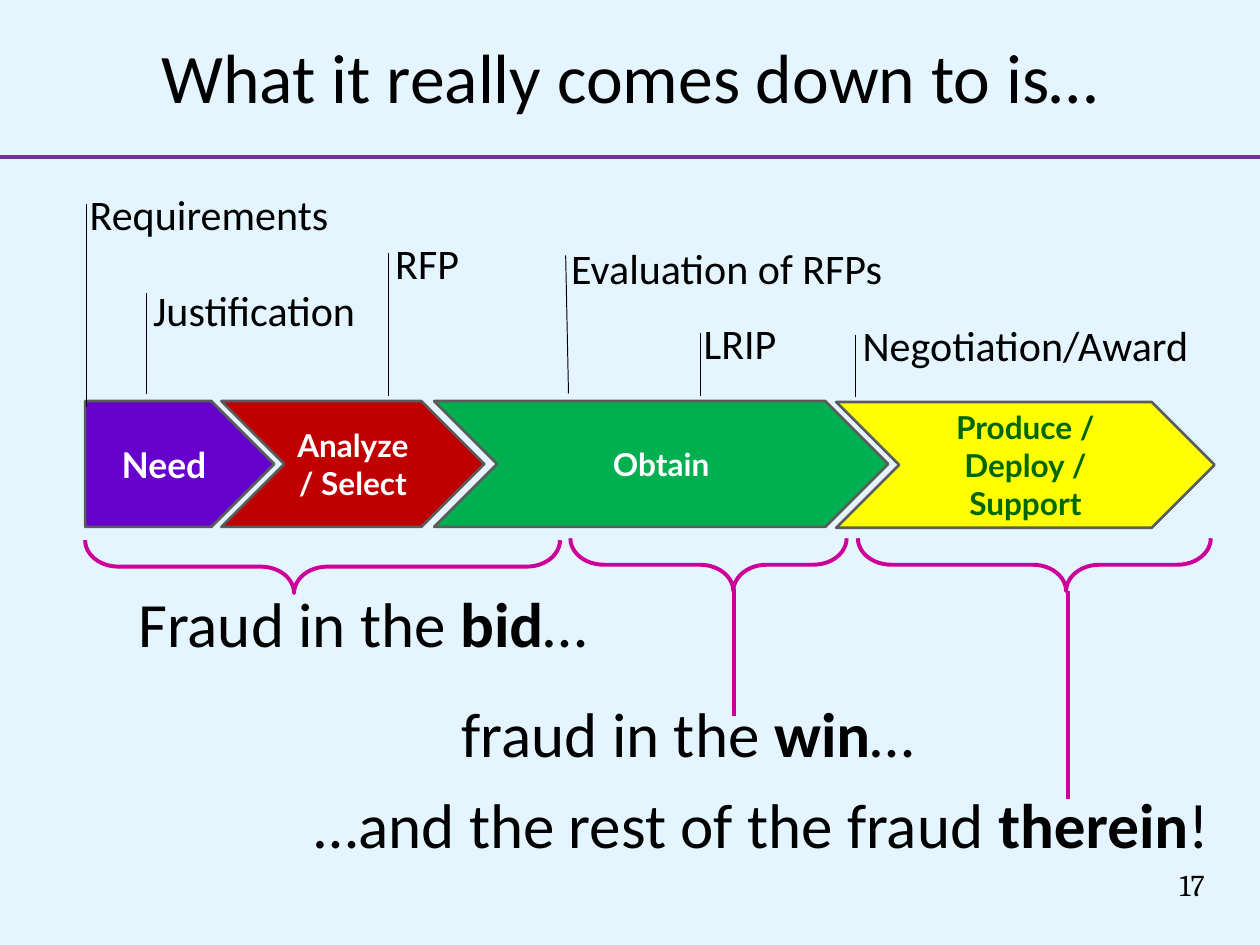
from dataclasses import dataclass

from lxml import etree
from pptx import Presentation
from pptx.dml.color import RGBColor
from pptx.enum import shapes, text
from pptx.oxml import ns
from pptx.util import Inches, Pt

SHAPE = shapes.MSO_SHAPE
ALIGN = text.PP_ALIGN
ANCHOR = text.MSO_ANCHOR


@dataclass(frozen=True)
class Theme:
    background: str = "E5F5FF"
    ink: str = "000000"
    light: str = "FFFFFF"
    rule: str = "7030A0"
    outline: str = "5A5B5D"
    brace: str = "CC0099"
    purple: str = "6600CC"
    red: str = "C00000"
    green: str = "00B050"
    yellow: str = "FFFF00"
    dark_green: str = "006600"
    body_font: str = "Calibri"
    phase_font: str = "Lato"
    number_font: str = "Cambria"
    title_size: float = 53
    message_size: float = 48
    label_size: float = 32
    need_size: float = 27
    phase_size: float = 24
    number_size: float = 23


class PageBuilder:
    def __init__(self, page, theme):
        self.page = page
        self.theme = theme
        page.background.fill.solid()
        page.background.fill.fore_color.rgb = RGBColor.from_string(theme.background)

    def set_text(self, shape, spans, size, font=None, color=None, bold=None,
                 align=ALIGN.LEFT, anchor=ANCHOR.TOP, insets=(0.1, 0.05)):
        frame = shape.text_frame
        frame.word_wrap = True
        frame.vertical_anchor = anchor
        frame.margin_left = frame.margin_right = Inches(insets[0])
        frame.margin_top = frame.margin_bottom = Inches(insets[1])
        para = frame.paragraphs[0]
        para.alignment = align
        para.font.name = font or self.theme.body_font
        para.font.size = Pt(size)
        para.font.bold = bold
        para.font.color.rgb = RGBColor.from_string(color or self.theme.ink)
        for words, strong in spans:
            span = para.add_run()
            span.text = words
            if strong:
                span.font.bold = True

    def text(self, left, top, width, height, spans, size, **style):
        box = self.page.shapes.add_textbox(
            Inches(left), Inches(top), Inches(width), Inches(height))
        self.set_text(box, spans, size, **style)

    def shape(self, kind, left, top, width, height, fill=None, line=None, weight=2):
        shape = self.page.shapes.add_shape(
            kind, Inches(left), Inches(top), Inches(width), Inches(height))
        shape.shadow.inherit = False
        if fill:
            shape.fill.solid()
            shape.fill.fore_color.rgb = RGBColor.from_string(fill)
        else:
            shape.fill.background()
        if line:
            shape.line.color.rgb = RGBColor.from_string(line)
            shape.line.width = Pt(weight)
        else:
            shape.line.fill.background()
        return shape

    def phase(self, kind, left, top, width, name, fill, color, size):
        arrow = self.shape(kind, left, top, width, 1.33, fill, self.theme.outline)
        self.set_text(arrow, [(name, False)], size, self.theme.phase_font, color,
                      True, ALIGN.CENTER, ANCHOR.MIDDLE)

    def line(self, start, end, color, weight):
        line = self.page.shapes.add_connector(
            shapes.MSO_CONNECTOR.STRAIGHT, *map(Inches, (*start, *end)))
        line.line.color.rgb = RGBColor.from_string(color)
        line.line.width = Pt(weight)
        etree.SubElement(line._element.spPr, ns.qn("a:effectLst"))

    def brace(self, left, top, span, point):
        depth = 0.56
        brace = self.shape(SHAPE.LEFT_BRACE, left + (span - depth) / 2,
                           top + (depth - span) / 2, depth, span,
                           line=self.theme.brace, weight=3)
        brace.rotation = 270
        brace.adjustments[0] = 0.63
        brace.adjustments[1] = point


def main():
    deck = Presentation()
    deck.slide_width, deck.slide_height = Inches(13.32), Inches(9.99)
    theme = Theme()
    builder = PageBuilder(deck.slides.add_slide(deck.slide_layouts[6]), theme)

    phases = [
        (SHAPE.PENTAGON, 0.9, 4.24, 2, "Need", theme.purple, theme.light, theme.need_size),
        (SHAPE.CHEVRON, 2.34, 4.24, 2.78, "Analyze/ Select", theme.red, theme.light,
         theme.phase_size),
        (SHAPE.CHEVRON, 4.59, 4.24, 4.8, "Obtain", theme.green, theme.light,
         theme.phase_size),
        (SHAPE.CHEVRON, 8.84, 4.25, 4, "Produce / Deploy / Support", theme.yellow,
         theme.dark_green, theme.phase_size),
    ]
    for phase in phases:
        builder.phase(*phase)

    builder.text(0, 0, 13.32, 1.6, [("What it really comes down to is…", False)],
                 theme.title_size, align=ALIGN.CENTER, anchor=ANCHOR.MIDDLE,
                 insets=(0.13, 0.07))
    builder.line((0, 1.66), (13.32, 1.66), theme.rule, 3.25)

    milestones = [
        ("Requirements", 0.85, 1.94, 3.42, (0.91, 4.3), (0.91, 2.16)),
        ("Justification", 1.52, 2.96, 2.89, (1.55, 4.17), (1.55, 3.1)),
        ("RFP", 4.08, 2.46, 1.18, (4.11, 4.19), (4.11, 2.67)),
        ("Evaluation of RFPs", 5.94, 2.51, 4.76, (6.01, 4.16), (5.98, 2.7)),
        ("LRIP", 7.34, 3.31, 2.89, (7.4, 4.19), (7.4, 3.52)),
        ("Negotiation/Award", 9.02, 3.33, 3.95, (9.04, 4.2), (9.04, 3.54)),
    ]
    for name, left, top, width, start, end in milestones:
        builder.line(start, end, theme.ink, 0.75)
        builder.text(left, top, width, 0.64, [(name, False)], theme.label_size)

    messages = [
        (1.33, 6.11, 5.19, "Fraud in the ", "bid", "…"),
        (4.75, 7.27, 5.11, "fraud in the ", "win", "…"),
        (3.2, 8.23, 9.8, "…and the rest of the fraud ", "therein", "!"),
    ]
    for left, top, width, lead, key, tail in messages:
        builder.text(left, top, width, 0.94,
                     [(lead, False), (key, True), (tail, False)],
                     theme.message_size, insets=(0.13, 0.07))

    for brace in [(0.9, 5.71, 5.02, 0.44), (6.03, 5.69, 2.92, 0.59),
                  (9.07, 5.69, 3.73, 0.59)]:
        builder.brace(*brace)
    for center, top, bottom in [(7.76, 6.23, 7.57), (11.29, 6.25, 8.45)]:
        builder.line((center, bottom), (center, top), theme.brace, 3)

    number = builder.shape(SHAPE.OVAL, 12.24, 8.99, 0.73, 0.73)
    builder.set_text(number, [("17", False)], theme.number_size, theme.number_font,
                     align=ALIGN.CENTER, anchor=ANCHOR.MIDDLE, insets=(0.01, 0.01))

    deck.save("out.pptx")


if __name__ == "__main__":
    main()
